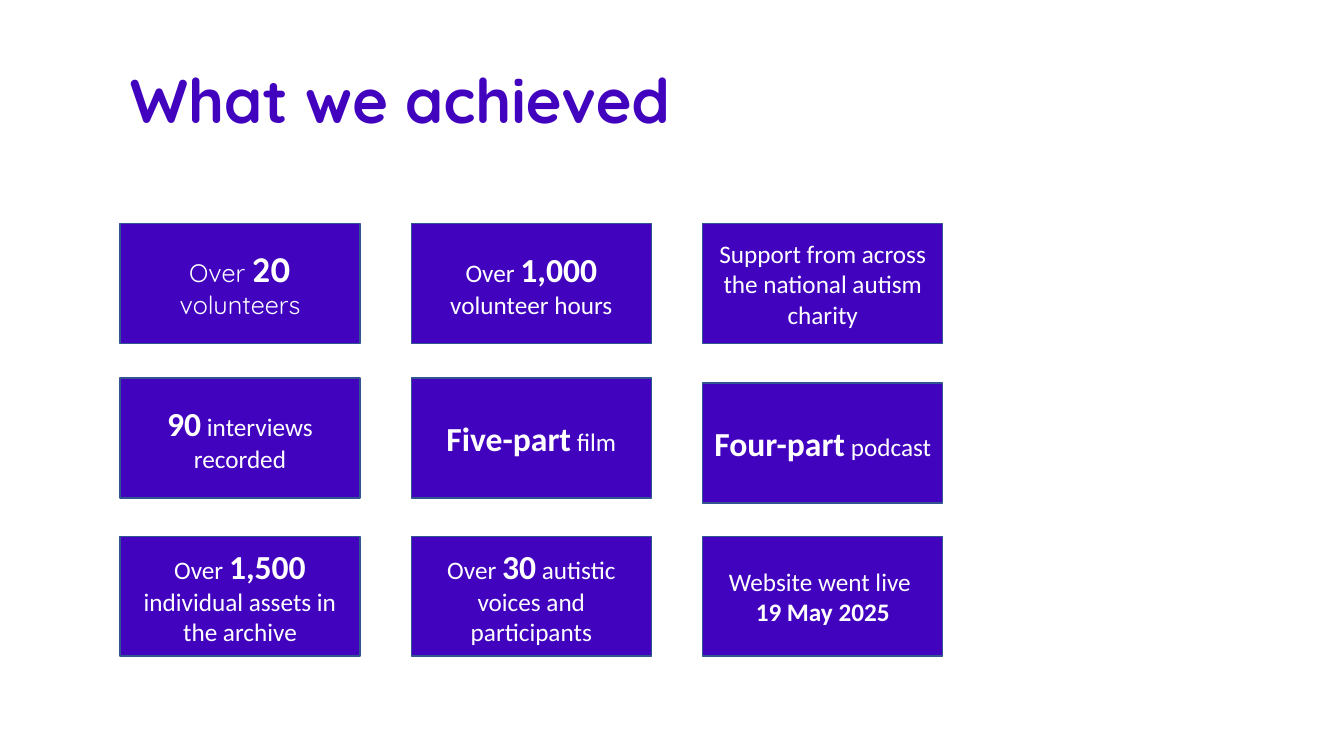
from pptx import Presentation
from pptx.dml.color import RGBColor
from pptx.enum.shapes import MSO_SHAPE
from pptx.enum.text import MSO_ANCHOR, PP_ALIGN
from pptx.util import Pt

RECT = MSO_SHAPE.RECTANGLE
MIDDLE = MSO_ANCHOR.MIDDLE
CENTER = PP_ALIGN.CENTER
PX = 9144  # 100 px to the inch
PURPLE, EDGE, WHITE = "4203BF", "325491", "FFFFFF"


def rgb(value):
    return RGBColor.from_string(value)


def add_text(p, text, size=18, bold=False, font="Calibri", color=WHITE):
    """Add a run to the paragraph; a newline becomes a line break."""
    for i, line in enumerate(text.split("\n")):
        if i:
            p.add_line_break()
        if line:
            r = p.add_run()
            r.text = line
            r.font.size = Pt(size)
            r.font.bold = bold
            r.font.name = font
            r.font.color.rgb = rgb(color)


prs = Presentation()
prs.slide_width, prs.slide_height = 1333 * PX, 750 * PX
s = prs.slides.add_slide(prs.slide_layouts[6])

title = s.shapes.add_textbox(119 * PX, 64 * PX, 651 * PX, 78 * PX)
tf = title.text_frame
tf.word_wrap = True
tf.vertical_anchor = MIDDLE
p = tf.paragraphs[0]
p.line_spacing = 0.9
add_text(p, "What we achieved", size=44, bold=True, font="Quicksand", color=PURPLE)

BIG = {"size": 24, "bold": True}
QUICK = {"font": "Quicksand"}
achievements = [
    [
        [("Over ", QUICK), ("20", BIG | QUICK), (" volunteers", QUICK)],
        [("Over ", {}), ("1,000", BIG), (" volunteer hours", {})],
        [("Support from across the national autism charity", {})],
    ],
    [
        [("90", BIG), (" interviews recorded", {})],
        [("Five-part", BIG), (" film", {})],
        [("Four-part", BIG), (" podcast", {})],
    ],
    [
        [("Over ", {}), ("1,500", BIG), (" individual assets in the archive", {})],
        [("Over ", {}), ("30", BIG), (" autistic voices and participants", {})],
        [("Website went live \n", {}), ("19 May 2025", {"bold": True})],
    ],
]
LEFT, COLUMN_STEP = 119, 289
CARD_W, CARD_H = 238, 119
ROW_TOPS = [222, 375, 532]
PODCAST_CELL, PODCAST_DROP = (1, 2), 5  # this card sits slightly lower

for row, cards in enumerate(achievements):
    for col, runs in enumerate(cards):
        top = ROW_TOPS[row] + (PODCAST_DROP if (row, col) == PODCAST_CELL else 0)
        card = s.shapes.add_shape(
            RECT, (LEFT + col * COLUMN_STEP) * PX, top * PX, CARD_W * PX, CARD_H * PX
        )
        card.shadow.inherit = False
        card.fill.solid()
        card.fill.fore_color.rgb = rgb(PURPLE)
        card.line.color.rgb = rgb(EDGE)
        card.line.width = Pt(1)
        tf = card.text_frame
        tf.word_wrap = True
        tf.vertical_anchor = MIDDLE
        p = tf.paragraphs[0]
        p.alignment = CENTER
        for text, style in runs:
            add_text(p, text, **style)

prs.save("out.pptx")
